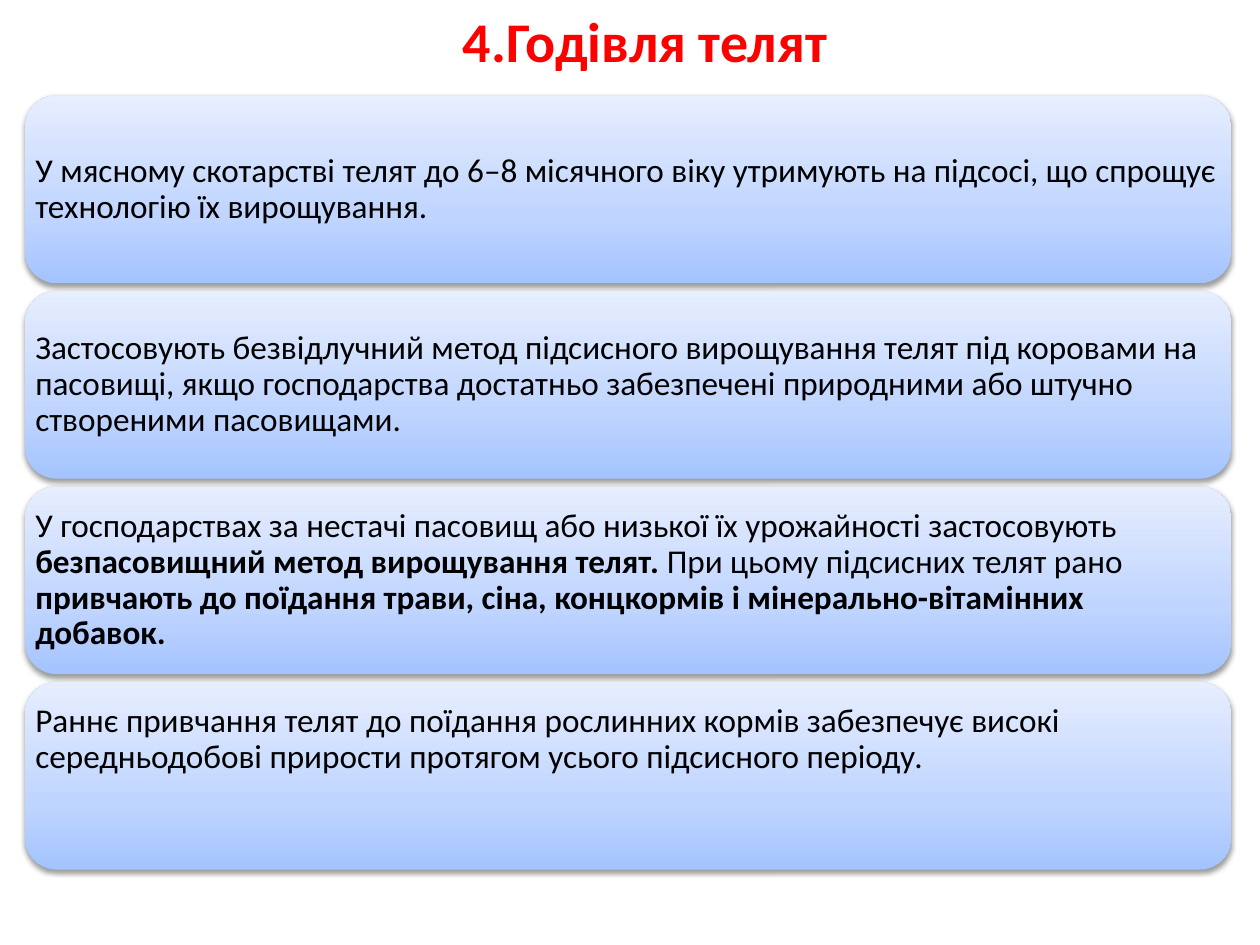
import pptx
import pptx.util
import pptx.dml.color
import pptx.enum.shapes
import pptx.enum.text
import pptx.oxml.ns
from lxml import etree

Cm, Pt = pptx.util.Cm, pptx.util.Pt
RGB = pptx.dml.color.RGBColor.from_string
qn = pptx.oxml.ns.qn
ANCHOR = pptx.enum.text.MSO_ANCHOR

THEME = {
    "font": "Calibri",
    "title": {"size": Pt(32), "bold": True, "color": "FF0000"},
    "body": {"size": Pt(19), "bold": False, "color": "000000"},
    "strong": {"size": Pt(19), "bold": True, "color": "000000"},
    "gradient": [(0, "A4C4FF"), (35, "BFD4FF"), (100, "E6EEFF")],
    "shadow": "000000",
}


def add_run(p, text, style):
    r = p.add_run()
    r.text = text
    r.font.name = THEME["font"]
    for name, value in THEME[style].items():
        if name == "color":
            r.font.color.rgb = RGB(value)
        else:
            setattr(r.font, name, value)


def add_color(parent, color):
    return etree.SubElement(parent, qn("a:srgbClr"), val=color)


prs = pptx.Presentation()
prs.slide_width, prs.slide_height = Cm(25.4), Cm(19.05)
s = prs.slides.add_slide(prs.slide_layouts[6])

# Panels: runs of text, vertical anchor, top margin
MARGIN = Cm(0.02)
panels = [
    ([("У мясному скотарстві телят до 6–8 місячного віку утримують на підсосі, "
       "що спрощує технологію їх вирощування.", "body")], ANCHOR.MIDDLE, MARGIN),
    ([("Застосовують безвідлучний метод підсисного вирощування телят під коровами "
       "на пасовищі, якщо господарства достатньо забезпечені природними або штучно "
       "створеними пасовищами.", "body")], ANCHOR.MIDDLE, MARGIN),
    ([("У господарствах за нестачі пасовищ або низької їх урожайності застосовують ", "body"),
      ("безпасовищний метод вирощування телят.", "strong"),
      (" При цьому підсисних телят рано ", "body"),
      ("привчають до поїдання трави, сіна, концкормів і мінерально-вітамінних добавок.",
       "strong")], ANCHOR.MIDDLE, MARGIN),
    ([("Раннє привчання телят до поїдання рослинних кормів забезпечує високі "
       "середньодобові прирости протягом усього підсисного періоду.", "body")],
     ANCHOR.TOP, Cm(0.26)),
]

for i, (runs, anchor, top) in enumerate(panels):
    sp = s.shapes.add_shape(pptx.enum.shapes.MSO_SHAPE.ROUNDED_RECTANGLE,
                            Cm(0.51), Cm(1.93 + 3.94 * i), Cm(24.31), Cm(3.78))
    sp.line.fill.background()

    # Three-stop gradient, darker at the bottom
    sp.fill.gradient()
    sp.fill.gradient_angle = 90
    stops = sp._element.spPr.find(".//" + qn("a:gsLst"))
    stops.clear()
    for pos, color in THEME["gradient"]:
        add_color(etree.SubElement(stops, qn("a:gs"), pos=str(pos * 1000)), color)

    # Soft shadow below
    sp.shadow.inherit = False
    shadow = etree.SubElement(sp._element.spPr.find(qn("a:effectLst")), qn("a:outerShdw"),
                              blurRad="40000", dist="20000", dir="5400000", rotWithShape="0")
    etree.SubElement(add_color(shadow, THEME["shadow"]), qn("a:alpha"), val="38000")

    # Text
    tf = sp.text_frame
    frame = {"word_wrap": True, "vertical_anchor": anchor, "margin_left": MARGIN,
             "margin_right": MARGIN, "margin_top": top, "margin_bottom": MARGIN}
    for name, value in frame.items():
        setattr(tf, name, value)
    p = tf.paragraphs[0]
    p.alignment = pptx.enum.text.PP_ALIGN.LEFT
    p.line_spacing = 0.9
    for text, style in runs:
        add_run(p, text, style)

# Title
tf = s.shapes.add_textbox(Cm(1.7), Cm(0), Cm(22.61), Cm(4.37)).text_frame
tf.word_wrap = True
p = tf.paragraphs[0]
p.alignment = pptx.enum.text.PP_ALIGN.CENTER
add_run(p, "4.Годівля телят", "title")

prs.save("out.pptx")
